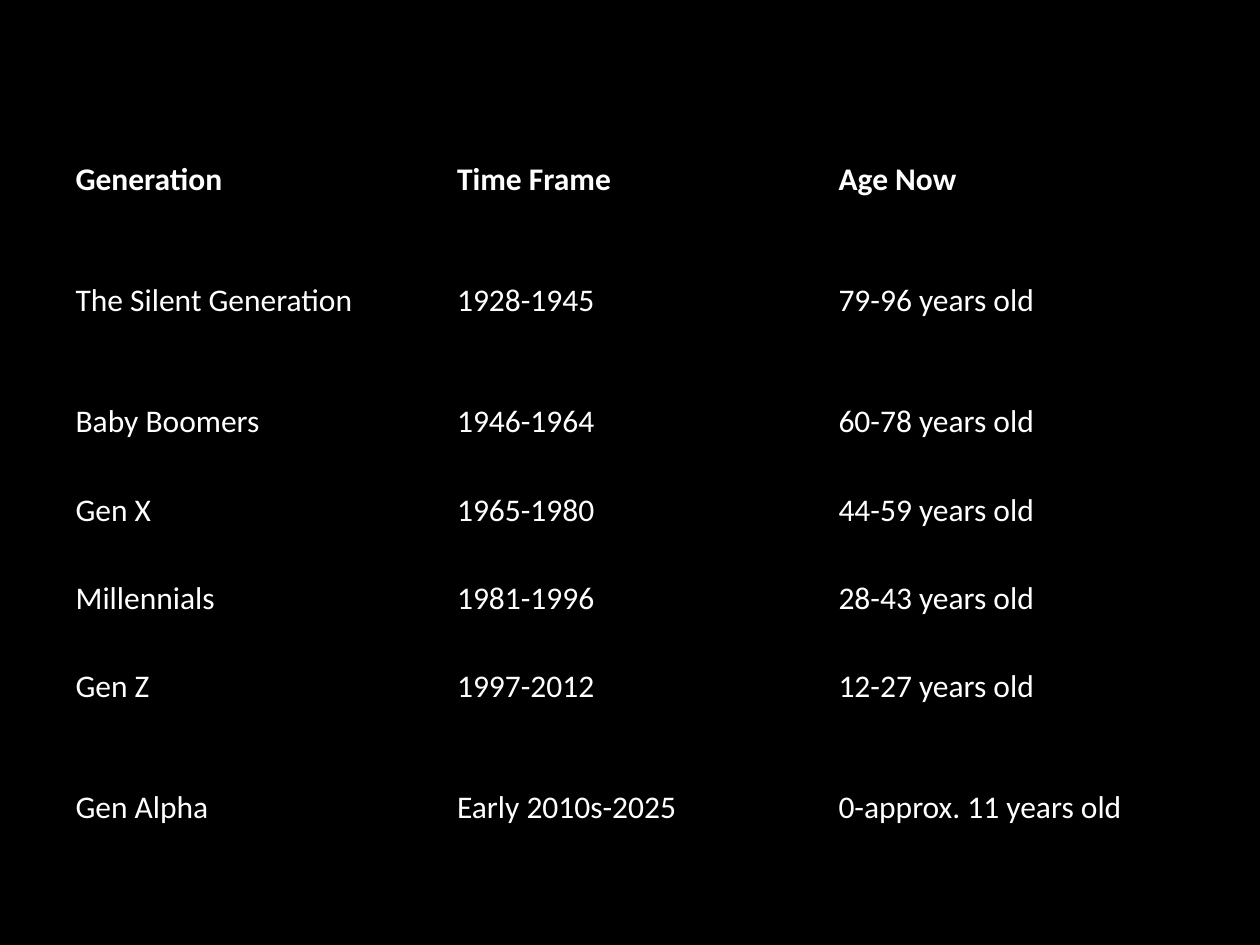
"""Build a slide with a table of generations, their time frames and ages."""
from dataclasses import dataclass

import pptx
import pptx.dml.color
import pptx.enum.text
import pptx.oxml.ns
import pptx.oxml.xmlchemy
import pptx.presentation
import pptx.slide
import pptx.table
import pptx.util
from lxml import etree

Cm = pptx.util.Cm


@dataclass(frozen=True)
class Theme:
    back: pptx.dml.color.RGBColor = pptx.dml.color.RGBColor(0, 0, 0)
    ink: pptx.dml.color.RGBColor = pptx.dml.color.RGBColor(255, 255, 255)
    font: str = "Calibri"
    size: pptx.util.Pt = pptx.util.Pt(18)


@dataclass(frozen=True)
class Row:
    name: str
    span: str
    age: str
    high: pptx.util.Cm = Cm(1.78)
    bold: bool = False


THEME = Theme()
TALL = Cm(3.1)
WIDE = Cm(7.69)
ROWS = [
    Row("Generation", "Time Frame", "Age Now", bold=True),
    Row("The Silent Generation", "1928-1945", "79-96 years old", TALL),
    Row("Baby Boomers", "1946-1964", "60-78 years old"),
    Row("Gen X", "1965-1980", "44-59 years old"),
    Row("Millennials", "1981-1996", "28-43 years old"),
    Row("Gen Z", "1997-2012", "12-27 years old"),
    Row("Gen Alpha", "Early 2010s-2025", "0-approx. 11 years old", TALL),
]


def clear_edges(cell: pptx.table._Cell) -> None:
    props = cell._tc.get_or_add_tcPr()
    for side in ("a:lnL", "a:lnR", "a:lnT", "a:lnB"):
        line = etree.SubElement(props, pptx.oxml.ns.qn(side))
        etree.SubElement(line, pptx.oxml.ns.qn("a:noFill"))


def fill_cell(cell: pptx.table._Cell, text: str, bold: bool) -> None:
    clear_edges(cell)
    cell.fill.background()
    cell.vertical_anchor = pptx.enum.text.MSO_ANCHOR.MIDDLE
    cell.text_frame.text = text
    font = cell.text_frame.paragraphs[0].runs[0].font
    font.name = THEME.font
    font.size = THEME.size
    font.bold = bold
    font.color.rgb = THEME.ink


def draw_table(slide: pptx.slide.Slide, rows: list[Row]) -> None:
    high = sum(row.high for row in rows)
    frame = slide.shapes.add_table(
        len(rows), 3, Cm(1.27), Cm(2.74), 3 * WIDE, high)
    table = frame.table
    table.horz_banding = False
    for col in table.columns:
        col.width = WIDE
    for line, row in zip(table.rows, rows):
        line.height = row.high
        for cell, text in zip(line.cells, (row.name, row.span, row.age)):
            fill_cell(cell, text, row.bold)


def main() -> None:
    deck = pptx.Presentation()
    deck.slide_width, deck.slide_height = Cm(25.4), Cm(19.05)
    slide = deck.slides.add_slide(deck.slide_layouts[6])
    slide.background.fill.solid()
    slide.background.fill.fore_color.rgb = THEME.back
    draw_table(slide, ROWS)
    deck.save("out.pptx")


if __name__ == "__main__":
    main()
